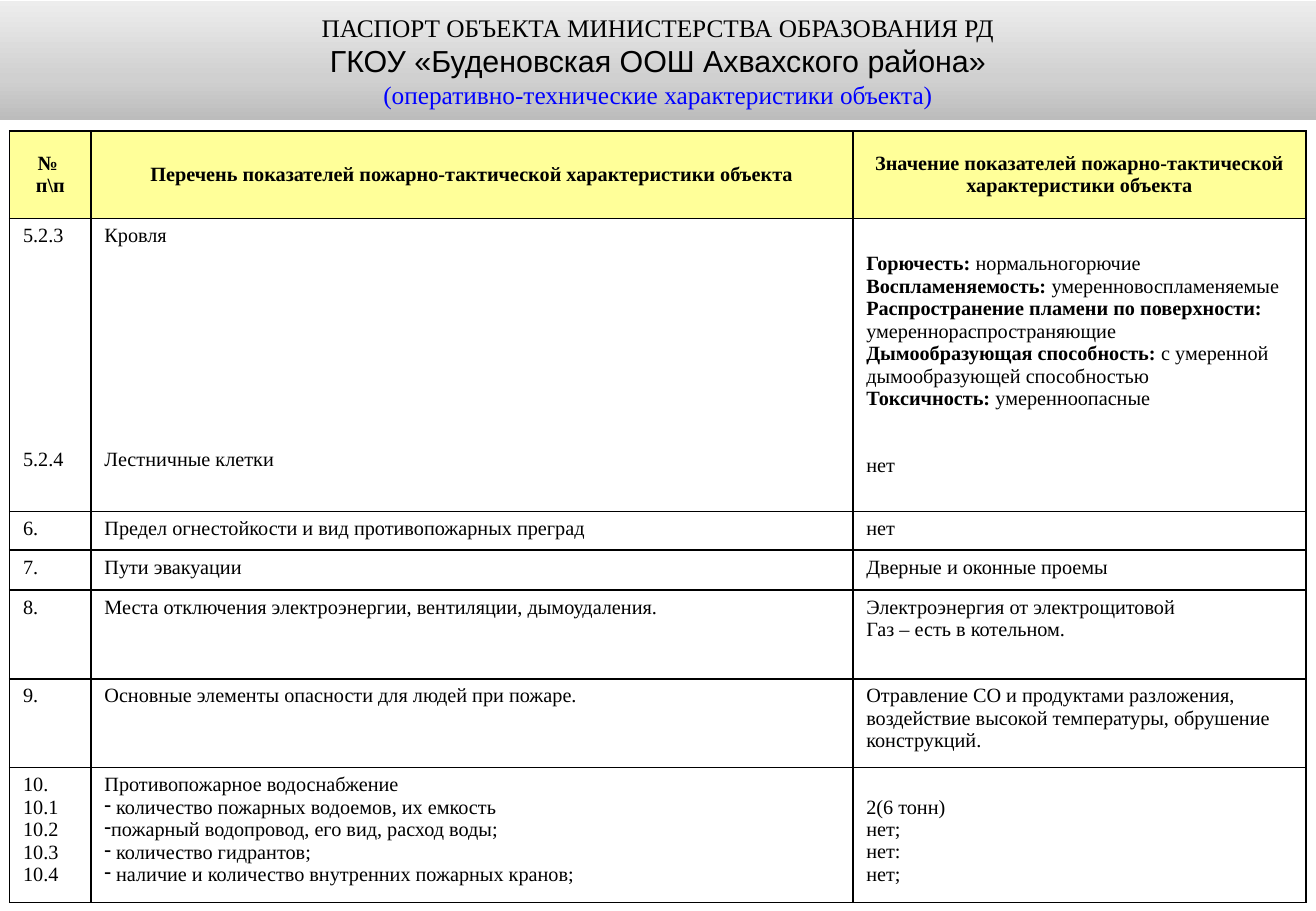
"""Builds the slide with the fire-safety passport table of a school."""
from dataclasses import dataclass

from pptx import Presentation
from pptx.dml.color import RGBColor
from pptx.enum.text import MSO_ANCHOR, MSO_AUTO_SIZE, PP_ALIGN
from pptx.oxml import parse_xml
from pptx.oxml.ns import nsdecls
from pptx.util import Inches, Pt

TOP, MIDDLE = MSO_ANCHOR.TOP, MSO_ANCHOR.MIDDLE
LEFT, CENTER = PP_ALIGN.LEFT, PP_ALIGN.CENTER
NO_AUTOFIT = MSO_AUTO_SIZE.NONE
TITLE_ONLY = 5


@dataclass(frozen=True)
class Theme:
    """Colours, fonts and type sizes of the slide."""
    serif: str = "Times New Roman"
    sans: str = "Arial"
    ink: str = "000000"
    accent: str = "0000FF"
    header: str = "FFFF99"
    body: str = "FFFFFF"
    banner: tuple = ((0, "BCBCBC"), (35, "D0D0D0"), (100, "EDEDED"))
    table_size: float = 12
    title_size: float = 15
    school_size: float = 18
    line_height: float = 13.28
    border: float = 1


THEME = Theme()


@dataclass(frozen=True)
class Line:
    """One paragraph: bold lead, plain text, lines skipped before it, bullet."""
    text: str = ""
    lead: str = ""
    skip: int = 0
    bullet: str = ""


@dataclass(frozen=True)
class Entry:
    """The content of one table cell."""
    lines: tuple
    anchor: MSO_ANCHOR = TOP
    align: PP_ALIGN = LEFT
    fill: str = THEME.body
    skip: int = 0


@dataclass(frozen=True)
class Row:
    """A table row: its height in inches and its three cells."""
    height: float
    entries: tuple


def plain(*texts: str) -> Entry:
    """Return a body cell with one plain paragraph per text."""
    return Entry(tuple(Line(text) for text in texts))


def heading(*texts: str) -> Entry:
    """Return a header cell with one bold paragraph per text."""
    return Entry(tuple(Line(lead=text) for text in texts), MIDDLE, CENTER, THEME.header)


COLUMNS = (0.67, 6.27, 3.73)
ROWS = (
    Row(0.72, (
        heading("№ ", "п\\п"),
        heading("Перечень показателей пожарно-тактической характеристики объекта"),
        heading("Значение показателей пожарно-тактической характеристики объекта"),
    )),
    Row(2.41, (
        Entry((Line("5.2.3"), Line("5.2.4", skip=9))),
        Entry((Line("Кровля"), Line("Лестничные клетки", skip=9))),
        Entry((
            Line(" нормальногорючие", "Горючесть:"),
            Line("умеренновоспламеняемые", "Воспламеняемость: "),
            Line(lead="Распространение пламени по поверхности:"),
            Line("умереннораспространяющие"),
            Line("с умеренной дымообразующей способностью", "Дымообразующая способность: "),
            Line(" умеренноопасные", "Токсичность:"),
            Line("нет", skip=2),
        ), MIDDLE),
    )),
    Row(0.32, (
        plain("6."),
        plain("Предел огнестойкости и вид противопожарных преград"),
        plain("нет"),
    )),
    Row(0.33, (plain("7."), plain("Пути эвакуации"), plain("Дверные и оконные проемы"))),
    Row(0.73, (
        plain("8."),
        plain("Места отключения электроэнергии, вентиляции, дымоудаления."),
        plain("Электроэнергия от электрощитовой", "Газ – есть в котельном."),
    )),
    Row(0.73, (
        plain("9."),
        plain("Основные элементы опасности для людей при пожаре."),
        plain("Отравление СО и продуктами разложения, воздействие высокой температуры, "
              "обрушение конструкций."),
    )),
    Row(1.11, (
        plain("10.", "10.1", "10.2", "10.3", "10.4"),
        Entry((
            Line("Противопожарное водоснабжение"),
            Line(" количество пожарных водоемов, их емкость", bullet="-"),
            Line("пожарный водопровод, его вид, расход воды;", bullet="-"),
            Line(" количество гидрантов;", bullet="-"),
            Line(" наличие и количество внутренних пожарных кранов;", bullet="-"),
        )),
        Entry((Line("2(6 тонн)"), Line("нет;"), Line("нет:"), Line("нет;")), skip=1),
    )),
)


def write(paragraph, text: str, *, size: float = THEME.table_size, font: str = THEME.serif,
          color: str = THEME.ink, bold: bool = False) -> None:
    """Add a formatted run to a paragraph."""
    run = paragraph.add_run()
    run.text = text
    run.font.size, run.font.name, run.font.bold = Pt(size), font, bold
    run.font.color.rgb = RGBColor.from_string(color)


def next_paragraph(frame, index: int, align: PP_ALIGN):
    """Return the aligned paragraph at the index, adding it after the first."""
    paragraph = frame.add_paragraph() if index else frame.paragraphs[0]
    paragraph.alignment = align
    return paragraph


def set_bullet(paragraph, mark: str) -> None:
    """Give a paragraph a bullet without an indent."""
    properties = paragraph._p.get_or_add_pPr()
    properties.set("marL", "0")
    properties.set("indent", "0")
    properties.append(parse_xml(f'<a:buChar {nsdecls("a")} char="{mark}"/>'))


def draw_cell(cell, entry: Entry) -> None:
    """Fill a table cell with its borders, colour and text."""
    properties = cell._tc.get_or_add_tcPr()
    for side in "LRTB":
        properties.append(parse_xml(
            f'<a:ln{side} {nsdecls("a")} w="{Pt(THEME.border)}"><a:solidFill>'
            f'<a:srgbClr val="{THEME.ink}"/></a:solidFill></a:ln{side}>'))
    cell.fill.solid()
    cell.fill.fore_color.rgb = RGBColor.from_string(entry.fill)
    cell.vertical_anchor = entry.anchor
    cell.margin_left = cell.margin_right = Inches(0.11)
    cell.margin_bottom = Inches(0.05)
    cell.margin_top = Inches(0.05) + Pt(entry.skip * THEME.line_height)
    for index, line in enumerate(entry.lines):
        paragraph = next_paragraph(cell.text_frame, index, entry.align)
        if line.skip:
            paragraph.space_before = Pt(line.skip * THEME.line_height)
        if line.bullet:
            set_bullet(paragraph, line.bullet)
        for text, bold in ((line.lead, True), (line.text, False)):
            if text:
                write(paragraph, text, bold=bold)


def draw_table(slide) -> None:
    """Draw the table of fire-safety characteristics."""
    table = slide.shapes.add_table(
        len(ROWS), len(COLUMNS), Inches(0.08), Inches(1.08),
        Inches(sum(COLUMNS)), Inches(sum(row.height for row in ROWS))).table
    for column, width in zip(table.columns, COLUMNS):
        column.width = Inches(width)
    for row_index, row in enumerate(ROWS):
        table.rows[row_index].height = Inches(row.height)
        for column_index, entry in enumerate(row.entries):
            draw_cell(table.cell(row_index, column_index), entry)


def draw_title(slide) -> None:
    """Format the title as a banner with a grey gradient."""
    title = slide.shapes.title
    title.left, title.top = Inches(0), Inches(0.01)
    title.width, title.height = Inches(10.83), Inches(0.98)
    stops = "".join(f'<a:gs pos="{place * 1000}"><a:srgbClr val="{color}"/></a:gs>'
                    for place, color in THEME.banner)
    title._element.spPr.append(parse_xml(
        f'<a:gradFill {nsdecls("a")} rotWithShape="1"><a:gsLst>{stops}</a:gsLst>'
        f'<a:lin ang="{270 * 60000}" scaled="0"/></a:gradFill>'))
    frame = title.text_frame
    frame.word_wrap, frame.auto_size, frame.vertical_anchor = True, NO_AUTOFIT, MIDDLE
    frame.margin_left = frame.margin_right = Inches(0.09)
    frame.margin_top = frame.margin_bottom = Inches(0.05)
    captions = (
        ("ПАСПОРТ ОБЪЕКТА МИНИСТЕРСТВА ОБРАЗОВАНИЯ РД", dict(size=THEME.title_size)),
        ("ГКОУ «Буденовская ООШ Ахвахского района»",
         dict(size=THEME.school_size, font=THEME.sans)),
        ("(оперативно-технические характеристики объекта)",
         dict(size=THEME.title_size, color=THEME.accent)),
    )
    for index, (text, style) in enumerate(captions):
        write(next_paragraph(frame, index, CENTER), text, **style)


def main() -> None:
    """Build and save the presentation."""
    deck = Presentation()
    deck.slide_width, deck.slide_height = Inches(10.83), Inches(7.5)
    slide = deck.slides.add_slide(deck.slide_layouts[TITLE_ONLY])
    draw_title(slide)
    draw_table(slide)
    deck.save("out.pptx")


if __name__ == "__main__":
    main()
